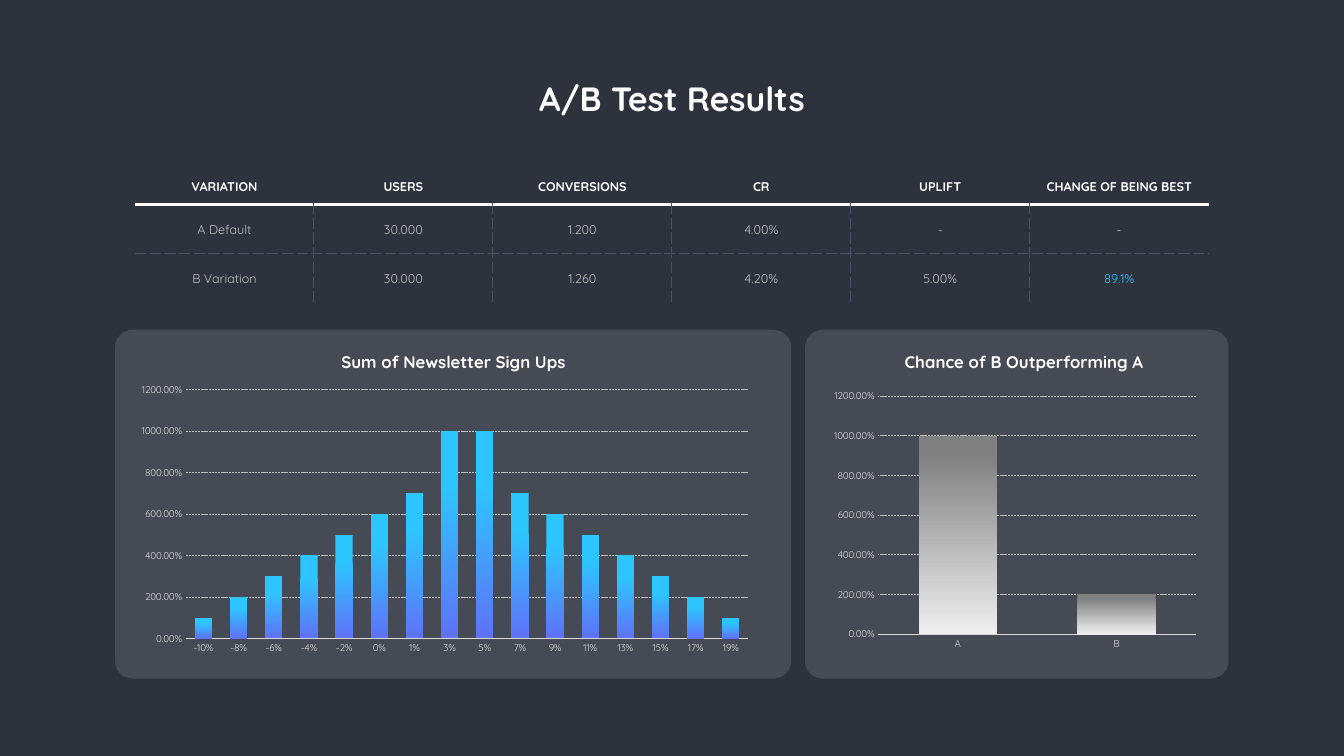
from lxml.etree import SubElement
from pptx import Presentation
from pptx.chart.data import CategoryChartData
from pptx.dml.color import RGBColor
from pptx.enum.chart import XL_CHART_TYPE, XL_TICK_MARK
from pptx.enum.dml import MSO_LINE
from pptx.enum.shapes import MSO_SHAPE
from pptx.enum.text import MSO_ANCHOR, PP_ALIGN
from pptx.oxml.ns import qn
from pptx.util import Cm, Pt

FONT = "Quicksand"
COLORS = {
    "background": "2D323D", "header": "2D323C", "header_gap": "2D333D",
    "white": "FFFFFF", "body": "BFBFBF", "accent": "2DC5FF",
    "rule": "495163", "panel": "EFEFEF", "axis": "D9D9D9", "grid": "BFBFBF",
    "violet": "5F72F8", "gray": "808080",
}


def write_text(frame, text, size=9, color="white", bold=False, spacing=None, margin=0):
    frame.word_wrap = True
    frame.vertical_anchor = MSO_ANCHOR.MIDDLE
    frame.margin_left = frame.margin_right = Cm(margin)
    frame.margin_top = frame.margin_bottom = Cm(margin)
    para = frame.paragraphs[0]
    para.alignment = PP_ALIGN.CENTER
    if spacing:
        para.line_spacing = Pt(spacing)
    span = para.add_run()
    span.text = text
    span.font.name = FONT
    span.font.size = Pt(size)
    span.font.bold = bold
    span.font.color.rgb = RGBColor.from_string(COLORS[color])


def add_border(cell, side, color=None, width=1, dash="solid"):
    properties = cell._tc.get_or_add_tcPr()
    line = SubElement(properties, qn(f"a:ln{side}"), w=str(Pt(width)))
    if color is None:
        SubElement(line, qn("a:noFill"))
        return
    fill = SubElement(line, qn("a:solidFill"))
    SubElement(fill, qn("a:srgbClr"), val=COLORS[color])
    SubElement(line, qn("a:prstDash"), val=dash)


deck = Presentation()
deck.slide_width, deck.slide_height = Cm(33.87), Cm(19.05)
page = deck.slides.add_slide(deck.slide_layouts[6])
page.background.fill.solid()
page.background.fill.fore_color.rgb = RGBColor.from_string(COLORS["background"])

# Title
box = page.shapes.add_textbox(Cm(8.07), Cm(1.96), Cm(17.73), Cm(1.02))
write_text(box.text_frame, "A/B Test Results", size=24, bold=True)

# Chart panels
panels = [
    {
        "title": "Sum of Newsletter Sign Ups", "title_left": 8.23,
        "left": 2.9, "width": 17.04, "chart": (3.25, 9.53, 15.93, 7.09),
        "categories": [-0.1, -0.08, -0.06, -0.04, -0.02, 0, 0.01, 0.03,
                       0.05, 0.07, 0.09, 0.11, 0.13, 0.15, 0.17, 0.19],
        "values": [1, 2, 3, 4, 5, 6, 7, 10, 10, 7, 6, 5, 4, 3, 2, 1],
        "gradient": [(0.26, "accent"), (1, "violet")],
    },
    {
        "title": "Chance of B Outperforming A", "title_left": 22.61,
        "left": 20.29, "width": 10.67, "chart": (20.83, 9.7, 9.5, 6.81),
        "categories": ["A", "B"], "values": [10, 2],
        "gradient": [(0.09, "gray"), (1, "panel")],
    },
]
for panel in panels:
    card = page.shapes.add_shape(MSO_SHAPE.ROUNDED_RECTANGLE, Cm(panel["left"]),
                                 Cm(8.31), Cm(panel["width"]), Cm(8.79))
    card.adjustments[0] = 0.05
    card.shadow.inherit = False
    card.line.fill.background()
    card.fill.solid()
    card.fill.fore_color.rgb = RGBColor.from_string(COLORS["panel"])
    tint = card._element.spPr.find(".//" + qn("a:srgbClr"))
    SubElement(tint, qn("a:alpha"), val="13000")

    box = page.shapes.add_textbox(Cm(panel["title_left"]), Cm(8.86), Cm(6.4), Cm(0.48))
    write_text(box.text_frame, panel["title"], size=12, bold=True, spacing=14.8)

    data = CategoryChartData(number_format="0.00%")
    data.categories = panel["categories"]
    if data.categories.are_numeric:
        data.categories.number_format = "0%"
    data.add_series("Series 1", panel["values"])
    chart = page.shapes.add_chart(XL_CHART_TYPE.COLUMN_CLUSTERED,
                                  *[Cm(length) for length in panel["chart"]], data).chart
    chart.has_title = chart.has_legend = False
    chart.font.name, chart.font.size = FONT, Pt(10)

    # Axes and gridlines
    for axis in (chart.category_axis, chart.value_axis):
        axis.major_tick_mark = axis.minor_tick_mark = XL_TICK_MARK.NONE
        font = axis.tick_labels.font
        font.name, font.size = FONT, Pt(7)
        font.color.rgb = RGBColor.from_string(COLORS["axis"])
    chart.category_axis.format.line.color.rgb = RGBColor.from_string(COLORS["axis"])
    chart.category_axis.format.line.width = Pt(0.75)
    scale = chart.value_axis
    scale.minimum_scale, scale.maximum_scale, scale.major_unit = 0, 12, 2
    scale.tick_labels.number_format = "0.00%"
    scale.tick_labels.number_format_is_linked = False
    scale.format.line.fill.background()
    grid = scale.major_gridlines.format.line
    grid.color.rgb = RGBColor.from_string(COLORS["grid"])
    grid.width = Pt(0.5)
    grid.dash_style = MSO_LINE.SQUARE_DOT

    # Columns
    plot = chart.plots[0]
    plot.vary_by_categories = False
    plot.gap_width, plot.overlap = 103, -29
    series = plot.series[0]
    series.invert_if_negative = False
    fill = series.format.fill
    fill.gradient()
    fill.gradient_angle = 270
    for stop, (position, color) in zip(fill.gradient_stops, panel["gradient"]):
        stop.position = position
        stop.color.rgb = RGBColor.from_string(COLORS[color])

# Results table
rows = [
    ["VARIATION", "USERS", "CONVERSIONS", "CR", "UPLIFT", "CHANGE OF BEING BEST"],
    ["A Default", "30.000", "1.200", "4.00%", "-", "-"],
    ["B Variation", "30.000", "1.260", "4.20%", "5.00%", "89.1%"],
]
last_row, last_column = len(rows) - 1, len(rows[0]) - 1
table = page.shapes.add_table(len(rows), len(rows[0]), Cm(3.4), Cm(4.22),
                              Cm(27.06), Cm(3.39)).table
table.first_row = table.horz_banding = False
for column in table.columns:
    column.width = Cm(4.51)
for row, height in zip(table.rows, (0.93, 1.23, 1.23)):
    row.height = Cm(height)

thick_white = {"color": "white", "width": 2.25}
thick_gap = {"color": "header_gap", "width": 2.25}
dashed = {"color": "rule", "width": 1, "dash": "sysDash"}
for r, texts in enumerate(rows):
    for c, text in enumerate(texts):
        cell = table.cell(r, c)
        is_header = r == 0
        inner = thick_gap if is_header else dashed
        above = [{}, thick_white, dashed][r]
        below = [thick_white, dashed, {}][r]
        add_border(cell, "L", **(inner if c > 0 else {}))
        add_border(cell, "R", **(inner if c < last_column else {}))
        add_border(cell, "T", **above)
        add_border(cell, "B", **below)
        if is_header:
            cell.fill.solid()
            cell.fill.fore_color.rgb = RGBColor.from_string(COLORS["header"])
        else:
            cell.fill.background()
        is_best = (r, c) == (last_row, last_column)
        color = "white" if is_header else "accent" if is_best else "body"
        write_text(cell.text_frame, text, color=color, bold=is_header, spacing=11.8)
        cell.vertical_anchor = MSO_ANCHOR.MIDDLE
        margin = Cm(0.2 if is_header else 0.41)
        cell.margin_left = cell.margin_right = margin
        cell.margin_top = cell.margin_bottom = margin

deck.save("out.pptx")
